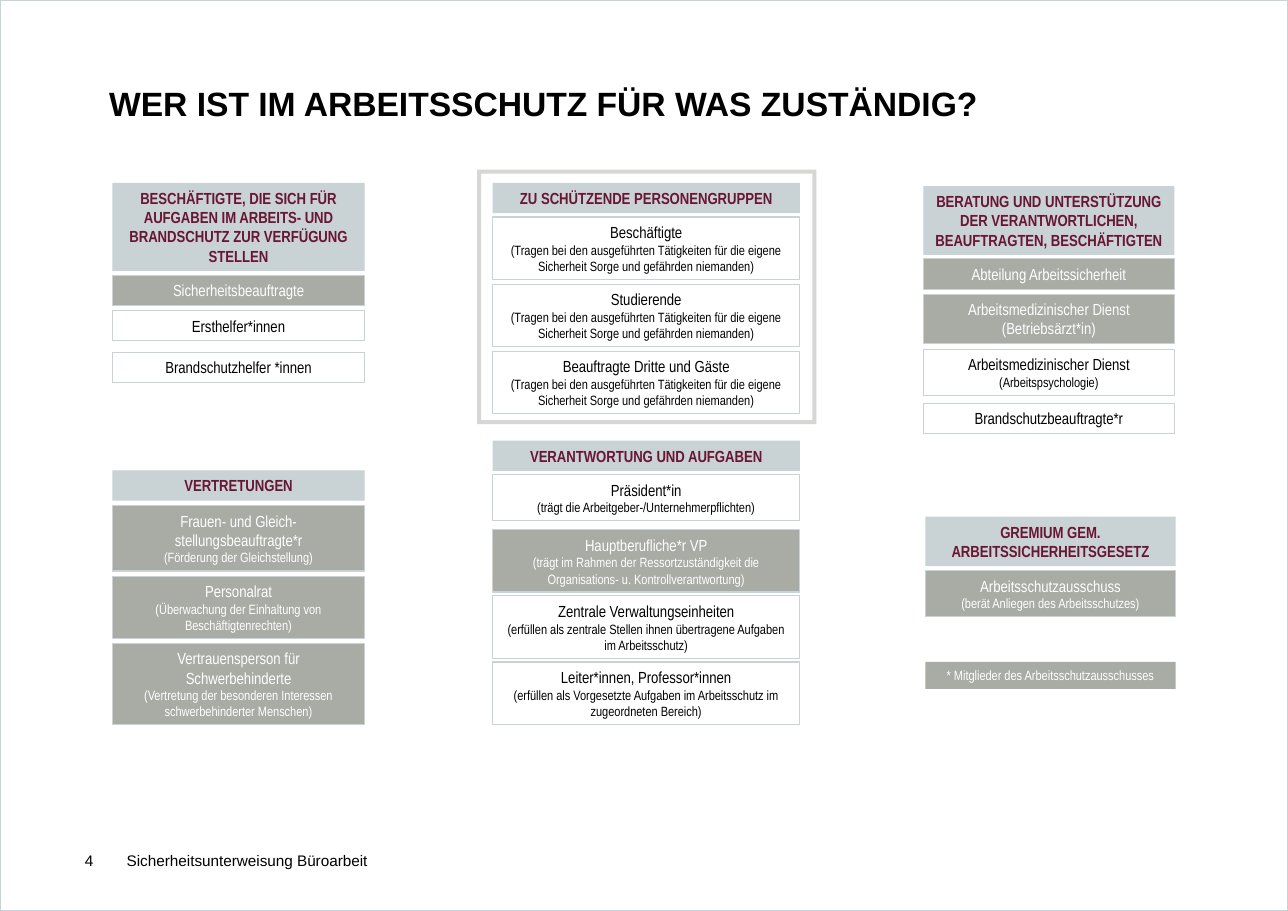
"""Build the slide on responsibilities in occupational safety."""
from pptx import Presentation
from pptx import util as u
from pptx.dml import color
from pptx.enum import shapes, text

COLORS = {"pale": "C9D2D5", "grey": "A8ACA5", "frame": "D6D7D4",
          "wine": "691633", "black": "000000", "white": "FFFFFF"}
STYLES = {"head": ("pale", None, "wine"), "member": ("grey", "pale", "white"),
          "plain": (None, "pale", "black"), "legend": ("grey", None, "white")}
WIDTH, HEIGHT = 11.69, 8.27
PADDING, MAIN_LINE, NOTE_LINE = 0.1, 0.175, 0.145
CARE = "(Tragen bei den ausgeführten Tätigkeiten für die eigene Sicherheit Sorge und gefährden niemanden)"

# 
presentation = Presentation()
presentation.slide_width, presentation.slide_height = u.Inches(WIDTH), u.Inches(HEIGHT)
slide = presentation.slides.add_slide(presentation.slide_layouts[5])


def add_box(left, top, width, height, fill, line, weight=0.75, kind=shapes.MSO_SHAPE.RECTANGLE):
    shape = slide.shapes.add_shape(kind, *map(u.Inches, (left, top, width, height)))
    shape.shadow.inherit = False
    if fill:
        shape.fill.solid()
        shape.fill.fore_color.rgb = color.RGBColor.from_string(COLORS[fill])
    else:
        shape.fill.background()
    if line:
        shape.line.color.rgb = color.RGBColor.from_string(COLORS[line])
        shape.line.width = u.Pt(weight)
    else:
        shape.line.fill.background()
    return shape


def style_paragraph(paragraph, size, name, ink, bold=False, align=text.PP_ALIGN.LEFT):
    paragraph.alignment = align
    for run in paragraph.runs:
        run.font.size, run.font.name, run.font.bold = u.Pt(size), name, bold
        run.font.color.rgb = color.RGBColor.from_string(COLORS[ink])


add_box(0, 0, WIDTH, HEIGHT, None, "pale", 1)

title = slide.shapes.title
title.left, title.top, title.width, title.height = map(u.Inches, (0.99, 0.79, 10.18, 0.48))
frame = title.text_frame
frame.text = "WER IST IM ARBEITSSCHUTZ FÜR WAS ZUSTÄNDIG?"
frame.margin_left = frame.margin_right = frame.margin_top = frame.margin_bottom = 0
frame.vertical_anchor = text.MSO_ANCHOR.TOP
frame.auto_size = text.MSO_AUTO_SIZE.NONE
frame.paragraphs[0].line_spacing = 0.9
style_paragraph(frame.paragraphs[0], 22, "Arial", "black", True)

stacks = [
    (1.02, 2.29, [
        (1.66, "head", "BESCHÄFTIGTE, DIE SICH FÜR AUFGABEN IM ARBEITS- UND BRANDSCHUTZ ZUR VERFÜGUNG STELLEN", 4, "", 0),
        (2.5, "member", "Sicherheitsbeauftragte", 1, "", 0),
        (2.82, "plain", "Ersthelfer*innen", 1, "", 0),
        (3.2, "plain", "Brandschutzhelfer *innen", 1, "", 0),
        (4.27, "head", "VERTRETUNGEN", 1, "", 0),
        (4.59, "member", "Frauen- und Gleich-stellungsbeauftragte*r", 2, "(Förderung der Gleichstellung)", 1),
        (5.23, "member", "Personalrat", 1, "(Überwachung der Einhaltung von Beschäftigtenrechten)", 2),
        (5.84, "member", "Vertrauensperson für Schwerbehinderte", 2,
         "(Vertretung der besonderen Interessen schwerbehinderter Menschen)", 2)]),
    (4.47, 2.79, [
        (1.66, "head", "ZU SCHÜTZENDE PERSONENGRUPPEN", 1, "", 0),
        (1.97, "plain", "Beschäftigte", 1, CARE, 2),
        (2.58, "plain", "Studierende", 1, CARE, 2),
        (3.19, "plain", "Beauftragte Dritte und Gäste", 1, CARE, 2),
        (4, "head", "VERANTWORTUNG UND AUFGABEN", 1, "", 0),
        (4.31, "plain", "Präsident*in", 1, "(trägt die Arbeitgeber-/Unternehmerpflichten)", 1),
        (4.81, "member", "Hauptberufliche*r VP", 1,
         "(trägt im Rahmen der Ressortzuständigkeit die Organisations- u. Kontrollverantwortung)", 2),
        (5.41, "plain", "Zentrale Verwaltungseinheiten", 1,
         "(erfüllen als zentrale Stellen ihnen übertragene Aufgaben im Arbeitsschutz)", 2),
        (6.01, "plain", "Leiter*innen, Professor*innen", 1,
         "(erfüllen als Vorgesetzte Aufgaben im Arbeitsschutz im zugeordneten Bereich)", 2)]),
    (8.38, 2.28, [
        (1.69, "head", "BERATUNG UND UNTERSTÜTZUNG DER VERANTWORTLICHEN, BEAUFTRAGTEN, BESCHÄFTIGTEN", 3, "", 0),
        (2.35, "member", "Abteilung Arbeitssicherheit", 1, "", 0),
        (2.67, "member", "Arbeitsmedizinischer Dienst (Betriebsärzt*in)", 2, "", 0),
        (3.17, "plain", "Arbeitsmedizinischer Dienst", 1, "(Arbeitspsychologie)", 1),
        (3.66, "plain", "Brandschutzbeauftragte*r", 1, "", 0)]),
    (8.4, 2.27, [
        (4.69, "head", "GREMIUM GEM. ARBEITSSICHERHEITSGESETZ", 2, "", 0),
        (5.18, "member", "Arbeitsschutzausschuss", 1, "(berät Anliegen des Arbeitsschutzes)", 1),
        (6.01, "legend", "", 0, "* Mitglieder des Arbeitsschutzausschusses", 1)]),
]

for left, width, entries in stacks:
    for top, style, label, label_lines, note, note_lines in entries:
        fill, line, ink = STYLES[style]
        height = PADDING + label_lines * MAIN_LINE + note_lines * NOTE_LINE
        frame = add_box(left, top, width, height, fill, line).text_frame
        frame.word_wrap = True
        frame.vertical_anchor = text.MSO_ANCHOR.TOP
        frame.auto_size = text.MSO_AUTO_SIZE.SHAPE_TO_FIT_TEXT
        frame.text = "\n".join(filter(None, (label, note)))
        for paragraph in frame.paragraphs:
            size = 8.8 if paragraph.text == note else 10.5
            style_paragraph(paragraph, size, "Arial Narrow", ink, style == "head", text.PP_ALIGN.CENTER)

group_frame = add_box(4.33, 1.54, 3.08, 2.31, "frame", None, kind=shapes.MSO_SHAPE.FRAME)
group_frame.adjustments[0] = 0.016

for left, width, label in [(0.77, 0.31, "4"), (1.15, 7.45, "Sicherheitsunterweisung Büroarbeit")]:
    frame = slide.shapes.add_textbox(*map(u.Inches, (left, 7.61, width, 0.4))).text_frame
    frame.word_wrap = True
    frame.margin_left = frame.margin_right = 0
    frame.vertical_anchor = text.MSO_ANCHOR.MIDDLE
    frame.text = label
    style_paragraph(frame.paragraphs[0], 10, "Arial", "black")

presentation.save("out.pptx")
